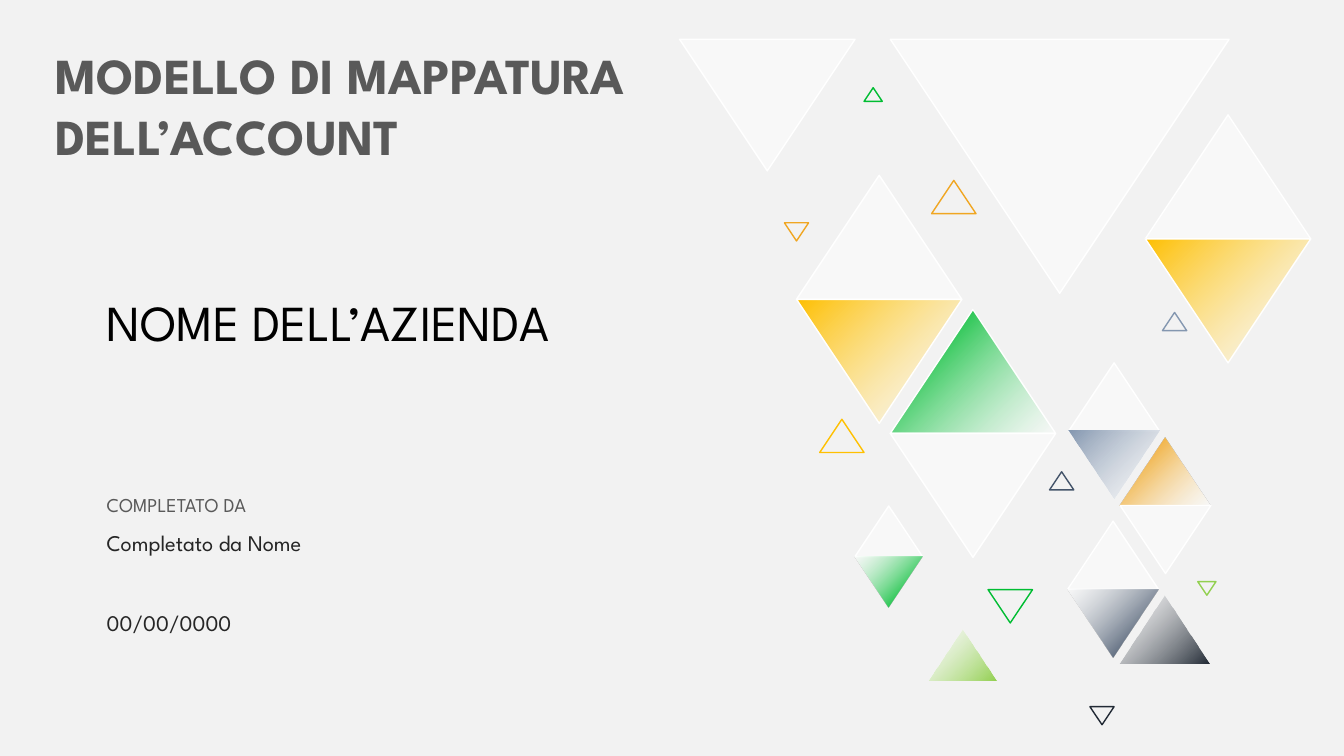
from lxml import etree
from pptx import Presentation
from pptx import util as u
from pptx.dml.color import RGBColor
from pptx.enum import shapes, text
from pptx.oxml import ns

WHITE = RGBColor(0xFF, 0xFF, 0xFF)
BACKDROP = RGBColor(0xF2, 0xF2, 0xF2)
BLACK = RGBColor(0x00, 0x00, 0x00)
GREY = RGBColor(0x59, 0x59, 0x59)
CHARCOAL = RGBColor(0x26, 0x26, 0x26)
YELLOW = RGBColor(0xFF, 0xC0, 0x00)
ORANGE = RGBColor(0xF0, 0xA6, 0x22)
GREEN = RGBColor(0x00, 0xBD, 0x32)
LIME = RGBColor(0x92, 0xD0, 0x50)
STEEL = RGBColor(0x84, 0x97, 0xB0)
SLATE = RGBColor(0x44, 0x54, 0x6A)
NIGHT = RGBColor(0x22, 0x2A, 0x35)

# Fills are tuples: one colour is solid, two are a gradient from start to end
GLASS = (WHITE,)
LARGE, MEDIUM, SMALL = 16.4, 9, 6.7


class Cover:
    """Style and current slide; lengths are cells of a 0.1 inch grid."""
    CELL = u.Inches(0.1)
    FONT = "League Spartan"
    RATIO = 0.75  # triangle height to width

    def __init__(self, deck):
        self.slide = deck.slides.add_slide(deck.slide_layouts[6])
        background = self.slide.background.fill
        background.solid()
        background.fore_color.rgb = BACKDROP
        self.pattern = None

    def cells(self, *lengths):
        return [round(length * self.CELL) for length in lengths]

    def label(self, col, row, cols, rows, words, color, size, bold=False, after=0):
        box = self.slide.shapes.add_textbox(*self.cells(col, row, cols, rows))
        frame = box.text_frame
        frame.word_wrap = True
        frame.auto_size = text.MSO_AUTO_SIZE.SHAPE_TO_FIT_TEXT
        paragraph = frame.paragraphs[0]
        paragraph.space_after = u.Pt(after)
        run = paragraph.add_run()
        run.text = words
        style = {"name": self.FONT, "size": u.Pt(size), "bold": bold}
        for attribute, value in style.items():
            setattr(run.font, attribute, value)
        run.font.color.rgb = color

    def start_pattern(self):
        self.pattern = self.slide.shapes.add_group_shape().shapes

    def triangle(self, col, row, cols, fill=(), line=None, down=False):
        shape = self.pattern.add_shape(
            shapes.MSO_SHAPE.ISOSCELES_TRIANGLE,
            *self.cells(col, row, cols, cols * self.RATIO))
        shape.shadow.inherit = False
        shape.rotation = 180 if down else 0
        self.paint(shape, fill)
        if line is None:
            shape.line.fill.background()
        else:
            shape.line.color.rgb = line
            shape.line.width = u.Pt(1)

    def paint(self, shape, colors):
        if not colors:
            shape.fill.background()
        elif len(colors) == 1:
            shape.fill.solid()
            shape.fill.fore_color.rgb = colors[0]
        else:
            shape.fill.gradient()
            shape.fill.gradient_angle = 135
            ends = (0, 1 if colors[1] == WHITE else 0.82)
            for stop, color, position in zip(shape.fill.gradient_stops, colors, ends):
                stop.color.rgb = color
                stop.position = position
        # White is half transparent in every fill
        for tint in shape.element.spPr.iter(ns.qn("a:srgbClr")):
            if tint.get("val") == str(WHITE):
                etree.SubElement(tint, ns.qn("a:alpha")).set("val", "50000")

    def facet(self, col, row, cols, fill, down=False):
        edge = WHITE if fill == GLASS or cols == LARGE else None
        self.triangle(col, row, cols, fill, edge, down)

    def diamond(self, col, row, cols, upper, lower):
        self.facet(col, row, cols, upper)
        self.facet(col, row + cols * self.RATIO, cols, lower, down=True)


def main():
    deck = Presentation()
    deck.slide_width, deck.slide_height = u.Inches(13.33), u.Inches(7.5)
    cover = Cover(deck)

    # Company and author caption
    cover.label(9.6, 28.4, 101.1, 7.1, "NOME DELL’AZIENDA", BLACK, 36)
    cover.label(9.6, 48.4, 33.9, 3.4, "COMPLETATO DA", GREY, 14, after=6)

    # Filled triangles
    cover.start_pattern()
    for diamond in (
        (79, 17.4, LARGE, GLASS, (YELLOW, WHITE)),
        (88.3, 30.7, LARGE, (WHITE, GREEN), GLASS),
        (113.6, 11.4, LARGE, GLASS, (YELLOW, WHITE)),
        (105.9, 51.7, MEDIUM, GLASS, (WHITE, SLATE)),
        (106, 36, MEDIUM, GLASS, (STEEL, WHITE)),
        (111.1, 43.4, MEDIUM, (WHITE, ORANGE), GLASS),
        (84.8, 50.2, SMALL, GLASS, (WHITE, GREEN)),
    ):
        cover.diamond(*diamond)
    cover.facet(88.3, 3.9, 33.6, GLASS, down=True)
    cover.facet(67.4, 3.9, 17.4, GLASS, down=True)
    cover.facet(111, 59.1, MEDIUM, (NIGHT, WHITE))
    cover.facet(92.1, 62.5, SMALL, (LIME, WHITE))

    # Outlined triangles
    for col, row, cols, color, down in (
        (98, 58.5, 4.4, GREEN, True),
        (81.3, 41.6, 4.4, YELLOW, False),
        (92.4, 17.9, 4.4, ORANGE, False),
        (104.1, 46.8, 2.4, SLATE, False),
        (108.1, 70.1, 2.4, NIGHT, True),
        (77.8, 22.1, 2.4, ORANGE, True),
        (115.3, 31, 2.4, STEEL, False),
        (85.7, 8.7, 1.8, GREEN, False),
        (118.8, 57.7, 1.8, LIME, True),
    ):
        cover.triangle(col, row, cols, line=color, down=down)

    # Title, author and date
    cover.label(4.5, 3.9, 70.2, 13.1, "MODELLO DI MAPPATURA DELL’ACCOUNT", GREY, 36, bold=True)
    cover.label(9.6, 52, 43.4, 3.7, "Completato da Nome", CHARCOAL, 16, after=6)
    cover.label(9.6, 59.9, 16.3, 3.7, "00/00/0000", CHARCOAL, 16, after=6)

    deck.save("out.pptx")


if __name__ == "__main__":
    main()
